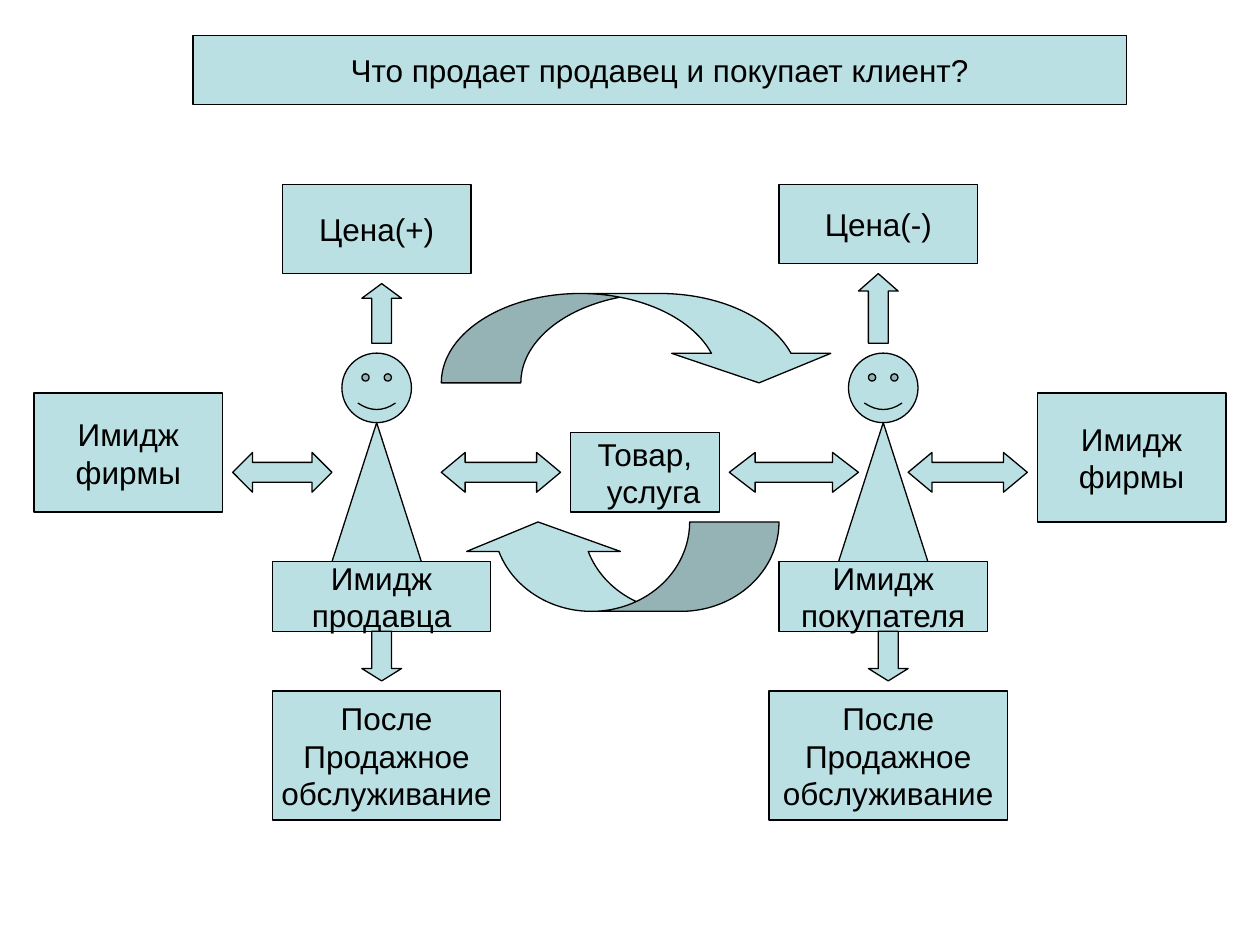
from dataclasses import dataclass

from pptx import Presentation
from pptx.dml.color import RGBColor
from pptx.enum.shapes import MSO_SHAPE
from pptx.enum.text import MSO_ANCHOR, PP_ALIGN
from pptx.util import Inches, Pt


@dataclass(frozen=True)
class Theme:
    fill: RGBColor = RGBColor(0xBB, 0xE0, 0xE3)
    ink: RGBColor = RGBColor(0, 0, 0)
    font: str = "Arial"
    size: Pt = Pt(18)
    outline: Pt = Pt(0.75)


THEME = Theme()
WIDTH, HEIGHT = Inches(10), Inches(7.5)
LEFT, TOP = Inches(0.27), Inches(0.28)
COLUMNS = 120
CELL = (WIDTH - 2 * LEFT) / COLUMNS
SECOND_LINE_INDENT = Inches(0.14)

PERSON_COLUMNS = (81, 30)
AFTER_SALE = ["После", "Продажное", "обслуживание"]
FIRM_IMAGE = ["Имидж", "фирмы"]
PRODUCT = ((54, 40, 15, 8), ["Товар,", "услуга"])
BOXES = [
    ((24, 53, 22, 7), ["Имидж", "продавца"]),
    ((75, 53, 21, 7), ["Имидж", "покупателя"]),
    ((16, 0, 94, 7), ["Что продает продавец и покупает клиент?"]),
    ((0, 36, 19, 12), FIRM_IMAGE),
    ((24, 66, 23, 13), AFTER_SALE),
    ((101, 36, 19, 13), FIRM_IMAGE),
    ((25, 15, 19, 9), ["Цена(+)"]),
    ((75, 15, 20, 8), ["Цена(-)"]),
    ((74, 66, 24, 13), AFTER_SALE),
]
ARROWS = [
    (MSO_SHAPE.LEFT_RIGHT_ARROW, (20, 42, 10, 4), (0.5, 0.5)),
    (MSO_SHAPE.LEFT_RIGHT_ARROW, (41, 42, 12, 4), (0.5, 0.6)),
    (MSO_SHAPE.LEFT_RIGHT_ARROW, (70, 42, 13, 4), (0.5, 0.65)),
    (MSO_SHAPE.LEFT_RIGHT_ARROW, (88, 42, 12, 4), (0.5, 0.6)),
    (MSO_SHAPE.UP_ARROW, (33, 25, 4, 6), (0.5, 0.37)),
    (MSO_SHAPE.UP_ARROW, (83, 24, 4, 7), (0.5, 0.44)),
    (MSO_SHAPE.DOWN_ARROW, (33, 60, 4, 5), (0.5, 0.31)),
    (MSO_SHAPE.DOWN_ARROW, (84, 60, 4, 5), (0.5, 0.31)),
    (MSO_SHAPE.CURVED_DOWN_ARROW, (41, 26, 40, 9), (0.89, 1.78, 0.33)),
]
RETURN_ARROW = (MSO_SHAPE.CURVED_LEFT_ARROW, (54.5, 37.5, 9, 32), (1, 1.72, 0.33))


def apply(target, values):
    for name, value in values.items():
        setattr(target, name, value)


def add_figure(page, kind, cells, adjustments=()):
    column, row, columns, rows = cells
    figure = page.shapes.add_shape(
        kind,
        round(LEFT + column * CELL),
        round(TOP + row * CELL),
        round(columns * CELL),
        round(rows * CELL),
    )
    figure.shadow.inherit = False
    figure.fill.solid()
    figure.fill.fore_color.rgb = THEME.fill
    figure.line.color.rgb = THEME.ink
    figure.line.width = THEME.outline
    for index, value in enumerate(adjustments):
        figure.adjustments[index] = value
    return figure


def add_box(page, cells, lines):
    box = add_figure(page, MSO_SHAPE.RECTANGLE, cells)
    frame = box.text_frame
    apply(frame, {"word_wrap": False, "vertical_anchor": MSO_ANCHOR.MIDDLE})
    for index, line in enumerate(lines):
        para = frame.add_paragraph() if index else frame.paragraphs[0]
        para.alignment = PP_ALIGN.CENTER
        span = para.add_run()
        span.text = line
        apply(span.font, {"name": THEME.font, "size": THEME.size})
        span.font.color.rgb = THEME.ink
    return box


def add_person(page, column):
    add_figure(page, MSO_SHAPE.ISOSCELES_TRIANGLE, (column, 39, 9, 14))
    add_figure(page, MSO_SHAPE.SMILEY_FACE, (column + 1, 32, 7, 7), (0.05,))


def add_product(page):
    para = add_box(page, *PRODUCT).text_frame.paragraphs[-1]
    para._p.get_or_add_pPr().set("marL", str(SECOND_LINE_INDENT))


def main():
    deck = Presentation()
    apply(deck, {"slide_width": WIDTH, "slide_height": HEIGHT})
    page = deck.slides.add_slide(deck.slide_layouts[6])
    for column in PERSON_COLUMNS:
        add_person(page, column)
    add_product(page)
    for cells, lines in BOXES:
        add_box(page, cells, lines)
    for kind, cells, adjustments in ARROWS:
        add_figure(page, kind, cells, adjustments)
    add_figure(page, *RETURN_ARROW).rotation = 90
    deck.save("out.pptx")


if __name__ == "__main__":
    main()
